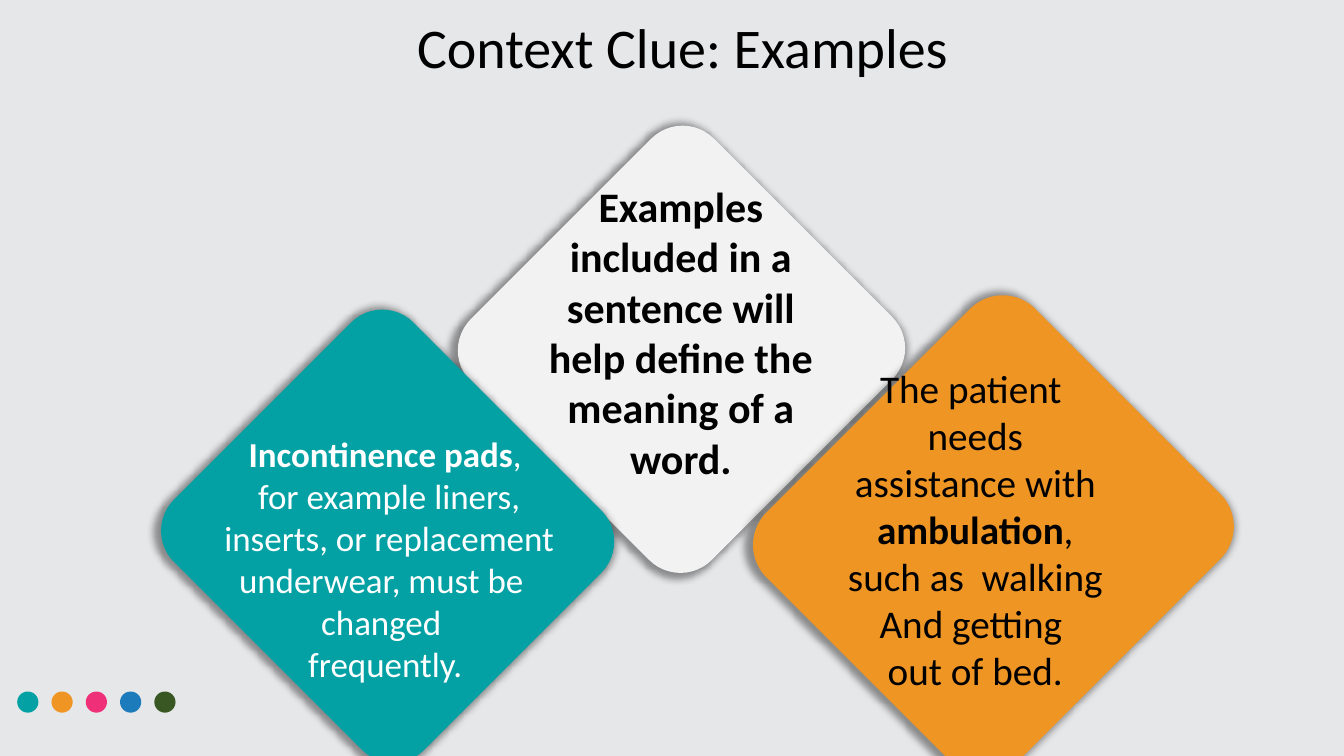
from lxml import etree
from pptx import Presentation, util as u
from pptx.dml.color import RGBColor
from pptx.enum import shapes, text
from pptx.oxml import ns

FONT = "Calibri"
TEAL, ORANGE, PALE = "03A1A4", "EE9524", "F2F2F2"
BLACK, WHITE = "000000", "FFFFFF"
WIDTH, HEIGHT = u.Inches(13.333), u.Inches(7.5)


def rgb(value):
    """Turn a hex string into a colour."""
    return RGBColor.from_string(value)


def place(box):
    """Turn percentages of the slide's width and height into lengths."""
    return [round(share * side / 100)
            for share, side in zip(box, (WIDTH, HEIGHT, WIDTH, HEIGHT))]


def add_filled(s, kind, box, color):
    """Add a plain shape without outline or shadow."""
    sp = s.shapes.add_shape(kind, *place(box))
    sp.shadow.inherit = False
    sp.fill.solid()
    sp.fill.fore_color.rgb = rgb(color)
    sp.line.fill.background()
    return sp


def add_glow_shadow(sp):
    """Give a shape a soft shadow slightly larger than itself."""
    effects = sp.element.spPr.find(ns.qn("a:effectLst"))
    shadow = etree.SubElement(effects, ns.qn("a:outerShdw"), blurRad=str(u.Pt(5)),
                              sx="102000", sy="102000", algn="ctr", rotWithShape="0")
    color = etree.SubElement(shadow, ns.qn("a:srgbClr"), val=BLACK)
    etree.SubElement(color, ns.qn("a:alpha"), val="40000")


def write(tf, paragraphs, size, color):
    """Fill a frame with centred paragraphs of (text, bold) runs."""
    tf.word_wrap = True
    tf.auto_size = text.MSO_AUTO_SIZE.NONE
    tf.vertical_anchor = text.MSO_ANCHOR.TOP
    for i, runs in enumerate(paragraphs):
        p = tf.paragraphs[0] if i == 0 else tf.add_paragraph()
        p.alignment = text.PP_ALIGN.CENTER
        p.font.name, p.font.size = FONT, u.Pt(size)
        p.font.color.rgb = rgb(color)
        for words, bold in runs:
            r = p.add_run()
            r.text = words
            r.font.bold = bold


def add_title(s, box, words):
    """Place the slide title in its placeholder."""
    sp = s.shapes.title
    sp.left, sp.top, sp.width, sp.height = place(box)
    write(sp.text_frame, [[(words, False)]], 40, BLACK)
    sp.text_frame.paragraphs[0].line_spacing = 1.0


def add_dots(s, box, colors, step):
    """Add a row of evenly spaced dots starting at the box."""
    left, top, width, height = box
    for i, color in enumerate(colors):
        add_filled(s, shapes.MSO_SHAPE.OVAL, (left + i * step, top, width, height), color)


def add_diamond(s, box, color, inner, paragraphs, size, text_color):
    """Add a turned rounded square and its text, offset from the box."""
    sp = add_filled(s, shapes.MSO_SHAPE.ROUNDED_RECTANGLE, box, color)
    sp.adjustments[0] = 0.13
    sp.rotation = 45
    add_glow_shadow(sp)
    dx, dy, width, height = inner
    tb = s.shapes.add_textbox(*place((box[0] + dx, box[1] + dy, width, height)))
    write(tb.text_frame, paragraphs, size, text_color)


def main():
    """Build and save the slide."""
    prs = Presentation()
    prs.slide_width, prs.slide_height = WIDTH, HEIGHT
    s = prs.slides.add_slide(prs.slide_layouts[5])
    s.background.fill.solid()
    s.background.fill.fore_color.rgb = rgb("E6E7E9")

    add_title(s, (29.18, 0.93, 43.2, 10.27), "Context Clue: Examples")
    add_dots(s, (1.28, 91.47, 1.58, 2.8),
             (TEAL, ORANGE, "EF3078", "1C7CBB", "385723"), 2.55)
    add_diamond(s, (38.03, 23.47, 25.35, 45.47), PALE, (2.02, -0.27, 21.23, 41.73), [
        [("Examples included in a sentence will help define the meaning of a word.", True)],
    ], 30, BLACK)
    add_diamond(s, (15.68, 48.53, 26.33, 44.8), TEAL, (-3.3, 8, 32.55, 35.07), [
        [("Incontinence pads", True), (",", False)],
        [(" for example liners,", False)],
        [(" inserts, or replacement", False)],
        [("underwear, must be ", False)],
        [("changed ", False)],
        [("frequently.", False)],
    ], 25, WHITE)
    add_diamond(s, (60.75, 45.73, 26.33, 50.27), ORANGE, (1.5, 1.74, 20.63, 45.33), [
        [("The patient ", False)],
        [("needs assistance with ", False), ("ambulation", True),
         (", such as  walking ", False)],
        [("And getting ", False)],
        [("out of bed.", False)],
    ], 28, BLACK)
    prs.save("out.pptx")


if __name__ == "__main__":
    main()
